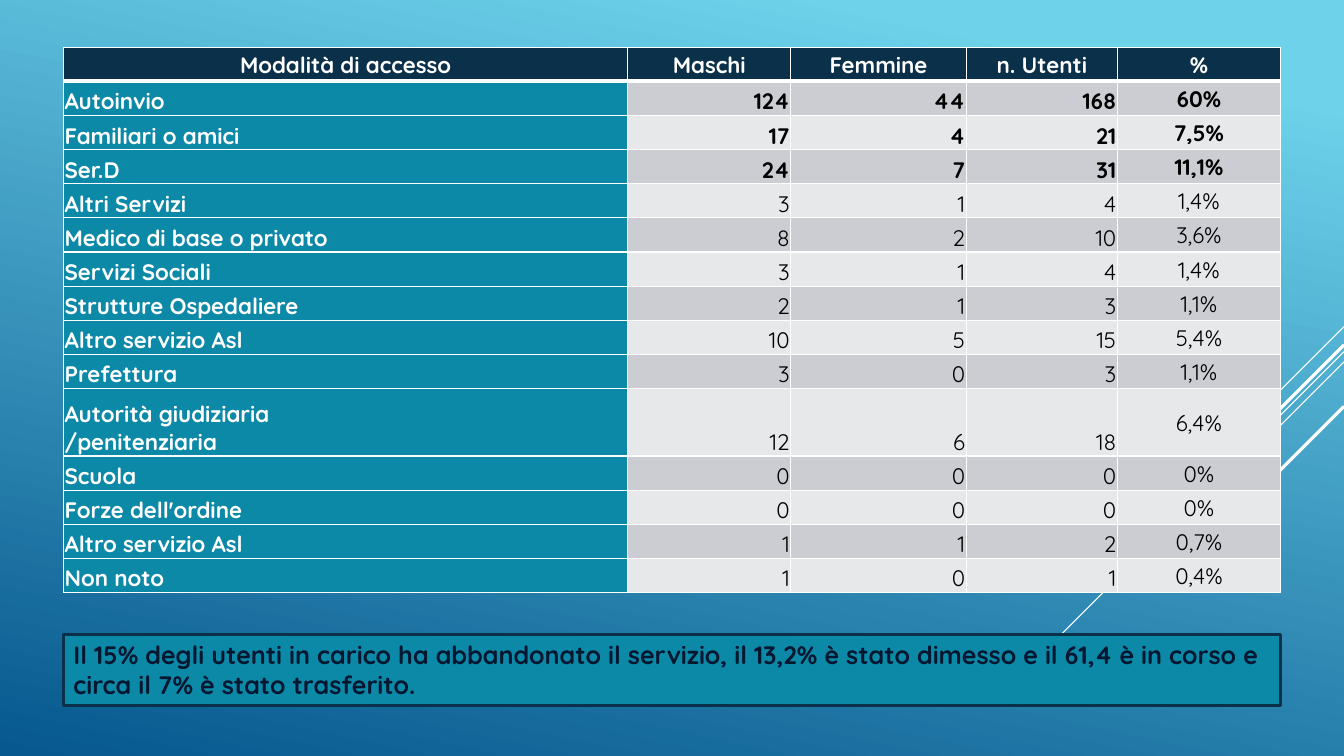
import dataclasses

import pptx
import pptx.dml.color
import pptx.enum.shapes
import pptx.enum.text
import pptx.oxml
import pptx.oxml.ns
import pptx.util

Cm = pptx.util.Cm
Pt = pptx.util.Pt
ALIGN = pptx.enum.text.PP_ALIGN
ANCHOR = pptx.enum.text.MSO_ANCHOR

WIDTH, HEIGHT = 33.87, 19.05
LEFT, SPAN = 1.6, 30.68
COLS = [14.22, 4.11, 4.42, 3.81, 4.11]
ROW, TALL = 0.86, 1.7
RAYS = [(8.23, 2.54, 0.75), (8.86, 8.28, 0.75), (9.12, 5.26, 0.75),
        (8.69, 4.85, 2.25), (10.24, 3.53, 2.25)]
HEAD = ["Modalità di accesso", "Maschi", "Femmine", "n. Utenti", "%"]
MAIN = 3
DATA = [
    ["Autoinvio", 124, 44, 168, "60%"],
    ["Familiari o amici", 17, 4, 21, "7,5%"],
    ["Ser.D", 24, 7, 31, "11,1%"],
    ["Altri Servizi", 3, 1, 4, "1,4%"],
    ["Medico di base o privato", 8, 2, 10, "3,6%"],
    ["Servizi Sociali", 3, 1, 4, "1,4%"],
    ["Strutture Ospedaliere", 2, 1, 3, "1,1%"],
    ["Altro servizio Asl", 10, 5, 15, "5,4%"],
    ["Prefettura", 3, 0, 3, "1,1%"],
    ["Autorità giudiziaria\n/penitenziaria", 12, 6, 18, "6,4%"],
    ["Scuola", 0, 0, 0, "0%"],
    ["Forze dell'ordine", 0, 0, 0, "0%"],
    ["Altro servizio Asl", 1, 1, 2, "0,7%"],
    ["Non noto", 1, 0, 1, "0,4%"],
]
NOTE = ("Il 15% degli utenti in carico ha abbandonato il servizio, "
        "il 13,2% è stato dimesso e il 61,4 è in corso e "
        "circa il 7% è stato trasferito.")


@dataclasses.dataclass
class Theme:
    font: str = "Quicksand"
    cell: int = 16
    note: int = 18
    sky: str = "6ED2EB"
    sea: str = "06588E"
    navy: str = "0A304A"
    teal: str = "0D89A8"
    ink: str = "031730"
    white: str = "FFFFFF"
    black: str = "000000"
    bands: tuple = ("CCCDD2", "E7E8EA")


def rgb(code):
    return pptx.dml.color.RGBColor.from_string(code)


def apply(item, form):
    for key, value in form.items():
        setattr(item, key, value)


class Deck:
    """Draw styled elements on the current slide."""

    def __init__(self, theme):
        self.theme = theme
        self.show = pptx.Presentation()
        apply(self.show, {"slide_width": Cm(WIDTH), "slide_height": Cm(HEIGHT)})
        self.slide = self.show.slides.add_slide(self.show.slide_layouts[6])

    def back(self):
        fill = self.slide.background.fill
        fill.gradient()
        fill.gradient_angle = 258
        stops = [(0.1, self.theme.sky), (1, self.theme.sea)]
        for stop, (place, code) in zip(fill.gradient_stops, stops):
            stop.position = place
            stop.color.rgb = rgb(code)

    def ray(self, top, reach, weight):
        line = self.slide.shapes.add_connector(
            pptx.enum.shapes.MSO_CONNECTOR.STRAIGHT,
            Cm(WIDTH), Cm(top), Cm(WIDTH - reach), Cm(top + reach))
        line.line.color.rgb = rgb(self.theme.white)
        line.line.width = Pt(weight)
        props = line._element.spPr
        props.append(props.makeelement(pptx.oxml.ns.qn("a:effectLst"), {}))

    def text(self, frame, words, size, code, bold, align):
        frame.text = str(words)
        form = {"name": self.theme.font, "size": Pt(size), "bold": bold}
        for para in frame.paragraphs:
            para.alignment = align
            for run in para.runs:
                apply(run.font, form)
                run.font.color.rgb = rgb(code)

    def edge(self, cell, sides):
        props = cell._tc.get_or_add_tcPr()
        space = pptx.oxml.ns.nsdecls("a")
        for side, weight in sides.items():
            props.append(pptx.oxml.parse_xml(
                f'<a:ln{side} {space} w="{Pt(weight)}"><a:solidFill>'
                f'<a:srgbClr val="{self.theme.white}"/>'
                f'</a:solidFill></a:ln{side}>'))

    def cell(self, cell, words, row, col):
        look = self.theme
        head, first, last = row == 0, col == 0, col == len(COLS) - 1
        mid = head or last
        self.edge(cell, {"L": 1, "R": 1, "T": 3 if row == 1 else 1,
                         "B": 3 if head else 1})
        apply(cell, {"margin_left": Cm(0.03), "margin_right": Cm(0.03),
                     "margin_top": Cm(0.03), "margin_bottom": 0,
                     "vertical_anchor": ANCHOR.MIDDLE if mid else ANCHOR.BOTTOM})
        cell.fill.solid()
        cell.fill.fore_color.rgb = rgb(
            look.navy if head else look.teal if first
            else look.bands[(row - 1) % 2])
        self.text(cell.text_frame, words, look.cell,
                  look.white if head or first else look.black,
                  first or row <= MAIN,
                  ALIGN.CENTER if mid else ALIGN.LEFT if first else ALIGN.RIGHT)

    def table(self, top, rows):
        high = [TALL if "\n" in row[0] else ROW for row in rows]
        grid = self.slide.shapes.add_table(
            len(rows), len(COLS), Cm(LEFT), Cm(top),
            Cm(SPAN), Cm(sum(high))).table
        for col, wide in zip(grid.columns, COLS):
            col.width = Cm(wide)
        for y, row in enumerate(rows):
            grid.rows[y].height = Cm(high[y])
            for x, words in enumerate(row):
                self.cell(grid.cell(y, x), words, y, x)

    def box(self, top, high, words):
        look = self.theme
        box = self.slide.shapes.add_shape(
            pptx.enum.shapes.MSO_SHAPE.RECTANGLE,
            Cm(LEFT), Cm(top), Cm(SPAN), Cm(high))
        box.shadow.inherit = False
        box.fill.solid()
        box.fill.fore_color.rgb = rgb(look.teal)
        box.line.color.rgb = rgb(look.navy)
        box.line.width = Pt(2.25)
        apply(box.text_frame, {
            "word_wrap": True, "vertical_anchor": ANCHOR.TOP,
            "auto_size": pptx.enum.text.MSO_AUTO_SIZE.SHAPE_TO_FIT_TEXT})
        self.text(box.text_frame, words, look.note, look.ink, True, ALIGN.LEFT)


def main():
    deck = Deck(Theme())
    deck.back()
    for ray in RAYS:
        deck.ray(*ray)
    deck.table(1.19, [HEAD] + DATA)
    deck.box(15.98, 1.8, NOTE)
    deck.show.save("out.pptx")


if __name__ == "__main__":
    main()
